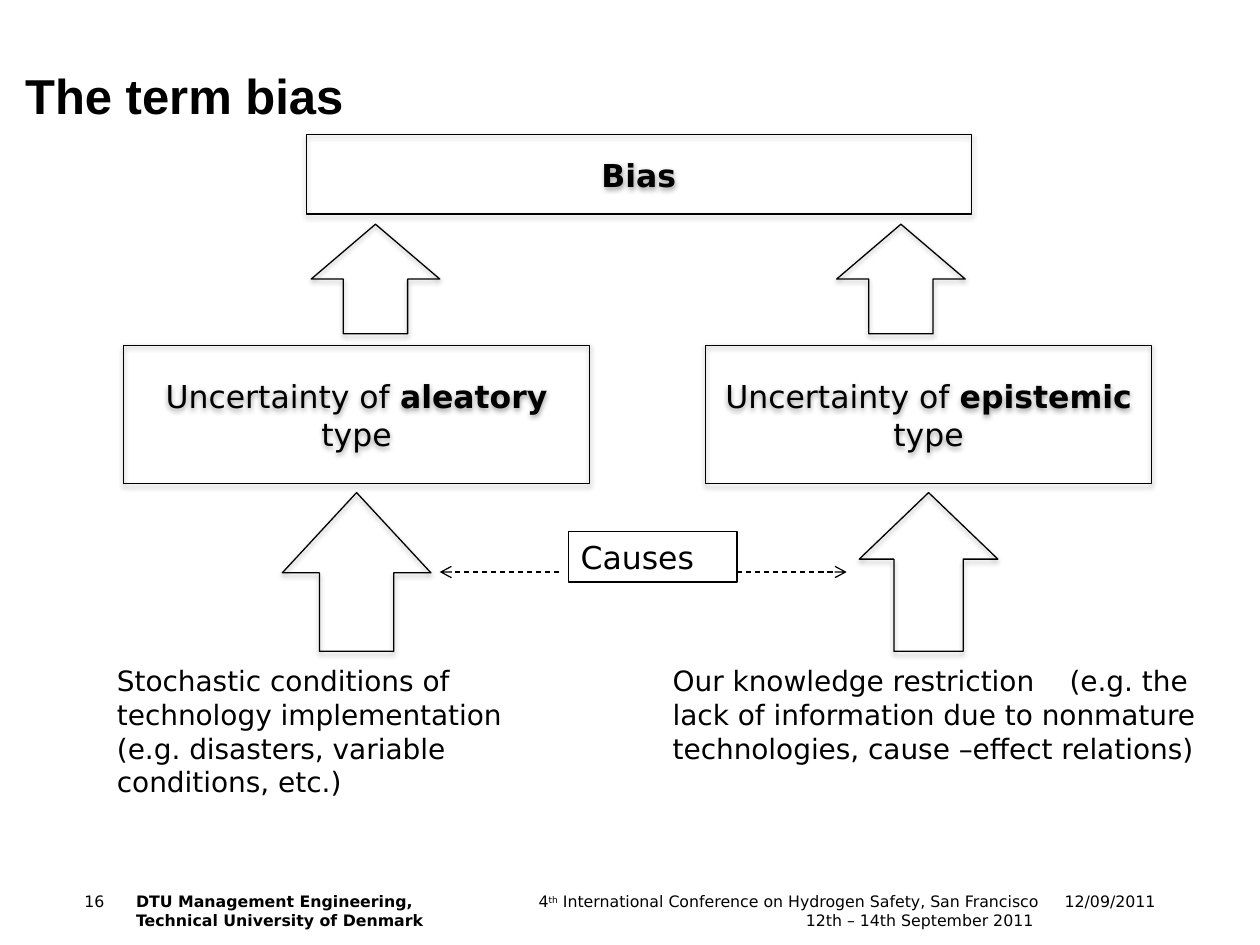
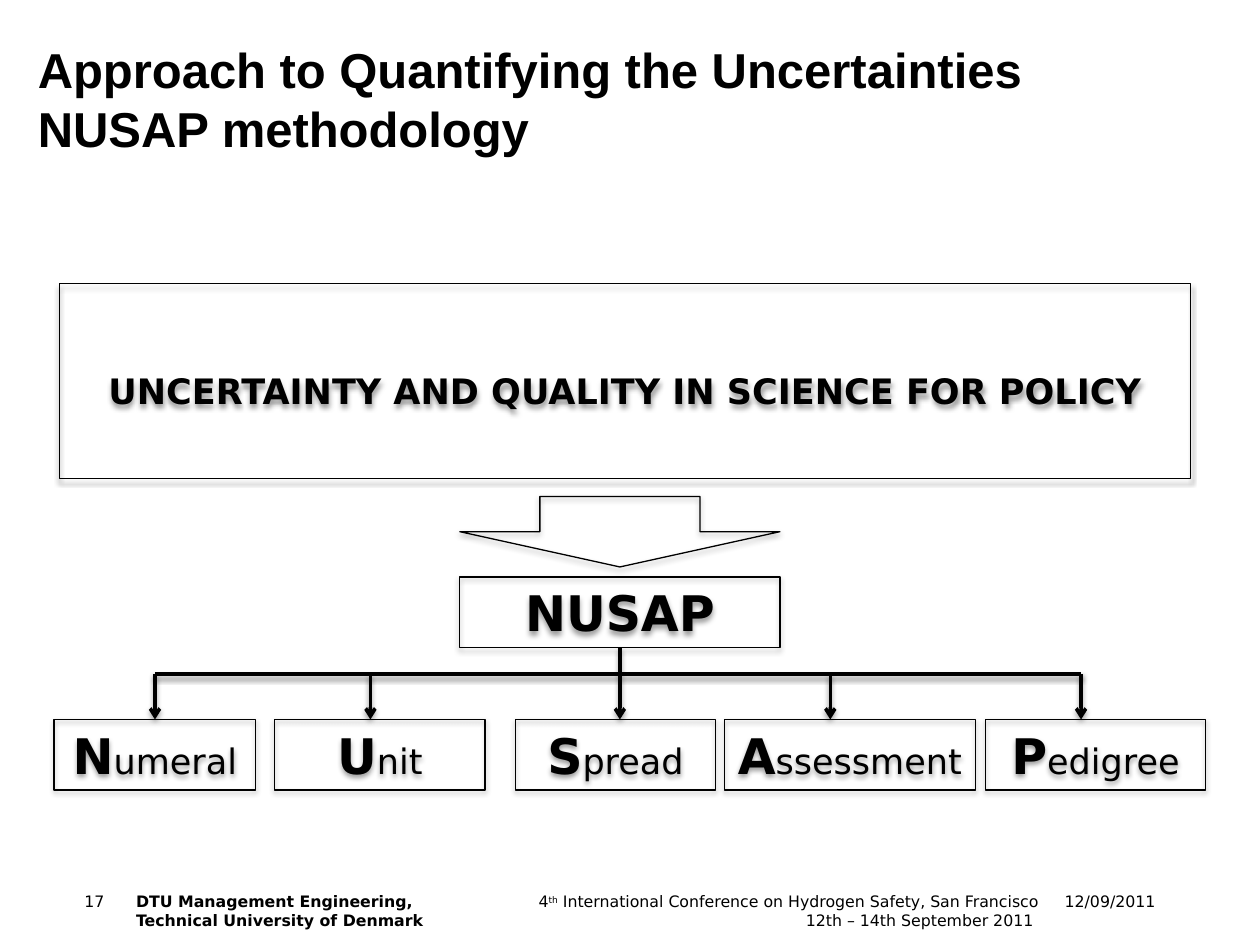
from dataclasses import dataclass
from lxml.etree import SubElement
from pptx import Presentation
from pptx.dml.color import RGBColor
from pptx.enum.dml import MSO_LINE_DASH_STYLE as Dash
from pptx.enum.shapes import MSO_CONNECTOR as Connector, MSO_SHAPE as Shape
from pptx.enum.text import MSO_ANCHOR as Anchor, PP_ALIGN as Align
from pptx.oxml.ns import qn
from pptx.util import Inches, Pt


@dataclass(frozen=True)
class Theme:
    ink: RGBColor = RGBColor(0, 0, 0)
    paper: RGBColor = RGBColor(255, 255, 255)
    title_font: str = "Arial"
    body_font: str = "DejaVu Sans"
    title: int = 28
    initial: int = 28
    heading: int = 20
    label: int = 18
    note: int = 16
    footer: int = 9
    outline: float = 0.75
    branch: float = 2
    shadow_alpha: int = 38000
    shadow_blur: float = 3.1
    shadow_distance: float = 1.6


THEME = Theme()
FOOTER_TOP, FOOTER_HEIGHT = 7.08, 0.33


def add_run(paragraph, text, size, bold=False, font=THEME.body_font):
    run = paragraph.add_run()
    run.text = text
    run.font.size = Pt(size)
    run.font.bold = bold
    run.font.name = font
    run.font.color.rgb = THEME.ink
    return run


def add_title(slide, lines, left, top, width, height):
    title = slide.shapes.title
    title.left, title.top = Inches(left), Inches(top)
    title.width, title.height = Inches(width), Inches(height)
    frame = title.text_frame
    clear_margins(frame)
    frame.word_wrap = True
    frame.vertical_anchor = Anchor.BOTTOM
    paragraph = frame.paragraphs[0]
    paragraph.alignment = Align.LEFT
    for index, line in enumerate(lines):
        if index:
            paragraph.add_line_break()
        add_run(paragraph, line, THEME.title, True, THEME.title_font)


def clear_margins(frame):
    frame.margin_left = frame.margin_right = 0
    frame.margin_top = frame.margin_bottom = 0


def add_text(slide, left, top, width, height):
    box = slide.shapes.add_textbox(Inches(left), Inches(top), Inches(width), Inches(height))
    box.text_frame.word_wrap = True
    return box.text_frame


def add_footer_part(slide, left, width, align=Align.LEFT):
    frame = add_text(slide, left, FOOTER_TOP, width, FOOTER_HEIGHT)
    clear_margins(frame)
    frame.paragraphs[0].alignment = align
    return frame


def add_footer(slide, number):
    date = add_footer_part(slide, 8.33, 0.84, Align.RIGHT).paragraphs[0]
    add_run(date, "12/09/2011", THEME.footer)

    conference = add_footer_part(slide, 4.13, 4.11, Align.RIGHT).paragraphs[0]
    add_run(conference, "4", THEME.footer)
    ordinal = add_run(conference, "th", THEME.footer)
    ordinal.font._element.set("baseline", "30000")
    add_run(conference, " International Conference on Hydrogen Safety, San Francisco "
            "12th – 14th September 2011 ", THEME.footer)

    page = add_footer_part(slide, 0.67, 0.33).paragraphs[0]
    add_run(page, str(number), THEME.footer)

    institute = add_footer_part(slide, 1.08, 2.9)
    add_run(institute.paragraphs[0], "DTU Management Engineering,", THEME.footer, True)
    add_run(institute.add_paragraph(), "Technical University of Denmark", THEME.footer, True)


def add_shadow(effects):
    shadow = SubElement(effects, qn("a:outerShdw"), blurRad=str(Pt(THEME.shadow_blur)),
                        dist=str(Pt(THEME.shadow_distance)), dir="5400000", rotWithShape="0")
    color = SubElement(shadow, qn("a:srgbClr"), val=str(THEME.ink))
    SubElement(color, qn("a:alpha"), val=str(THEME.shadow_alpha))


def add_outlined(slide, kind, left, top, width, height, shadow=True):
    shape = slide.shapes.add_shape(kind, Inches(left), Inches(top), Inches(width), Inches(height))
    shape.fill.background()
    shape.line.color.rgb = THEME.ink
    shape.line.width = Pt(THEME.outline)
    shape.shadow.inherit = False
    if shadow:
        add_shadow(shape._element.spPr.find(qn("a:effectLst")))
    return shape


def add_block_arrow(slide, kind, left, top, width, height, head=0.5):
    arrow = add_outlined(slide, kind, left, top, width, height)
    arrow.adjustments[0] = 0.5
    arrow.adjustments[1] = head


def add_box(slide, left, top, width, height, parts, align=Align.CENTER, shadow=True):
    box = add_outlined(slide, Shape.RECTANGLE, left, top, width, height, shadow)
    frame = box.text_frame
    frame.word_wrap = True
    frame.vertical_anchor = Anchor.MIDDLE
    paragraph = frame.paragraphs[0]
    paragraph.alignment = align
    for text, size, bold in parts:
        add_run(paragraph, text, size, bold)
    return box


def add_line(slide, start, end, width, arrow=True, dashed=False, shadow=False):
    line = slide.shapes.add_connector(Connector.STRAIGHT, *map(Inches, start + end))
    line.line.color.rgb = THEME.ink
    line.line.width = Pt(width)
    if dashed:
        line.line.dash_style = Dash.DASH
    properties = line._element.spPr
    if arrow:
        SubElement(properties.find(qn("a:ln")), qn("a:tailEnd"), type="arrow")
    effects = SubElement(properties, qn("a:effectLst"))
    if shadow:
        add_shadow(effects)
    return line


def add_note(slide, left, width, height, text, tab=None):
    paragraph = add_text(slide, left, 5.22, width, height).paragraphs[0]
    if tab:
        stops = SubElement(paragraph._p.get_or_add_pPr(), qn("a:tabLst"))
        SubElement(stops, qn("a:tab"), pos=str(Inches(tab)), algn="l")
    add_run(paragraph, text, THEME.note)


def new_slide(deck, number):
    slide = deck.slides.add_slide(deck.slide_layouts[5])
    slide.background.fill.solid()
    slide.background.fill.fore_color.rgb = THEME.paper
    add_footer(slide, number)
    return slide


def build_bias(deck):
    slide = new_slide(deck, 16)
    add_title(slide, ["The term bias"], 0.2, 0.36, 9, 0.63)

    add_box(slide, 2.43, 1.07, 5.28, 0.63, [("Bias", THEME.label, True)])
    for left, width, uncertainty in ((0.98, 3.7, "aleatory"), (5.6, 3.54, "epistemic")):
        add_box(slide, left, 2.74, width, 1.1, [
            ("Uncertainty of ", THEME.label, False),
            (uncertainty, THEME.label, True),
            (" type", THEME.label, False)])
    for left, width, head in ((2.24, 1.18, 0.54), (6.82, 1.1, 0.48)):
        add_block_arrow(slide, Shape.UP_ARROW, left, 3.91, width, 1.26, head)
    for left in (2.47, 6.64):
        add_block_arrow(slide, Shape.UP_ARROW, left, 1.78, 1.02, 0.87)

    add_box(slide, 4.51, 4.22, 1.34, 0.4, [("Causes", THEME.label, False)], Align.LEFT, False)
    for start, end in ((4.44, 3.49), (5.85, 6.72)):
        add_line(slide, (start, 4.54), (end, 4.54), THEME.outline, dashed=True)

    add_note(slide, 0.83, 3.54, 1.18, "Stochastic conditions of technology implementation "
             "(e.g. disasters, variable conditions, etc.)")
    add_note(slide, 5.24, 4.41, 0.91, "Our knowledge restriction\t(e.g. the lack of information "
             "due to nonmature technologies, cause –effect relations)", tab=3.15)


def build_nusap(deck):
    slide = new_slide(deck, 17)
    add_title(slide, ["Approach to Quantifying the Uncertainties", "NUSAP methodology"],
              0.3, 0.14, 9, 1.11)

    policy = add_box(slide, 0.47, 2.25, 8.98, 1.55, [
        ("UNCERTAINTY AND QUALITY IN SCIENCE FOR POLICY", THEME.heading, True)])
    policy.text_frame.margin_top = Inches(0.2)
    add_block_arrow(slide, Shape.DOWN_ARROW, 3.65, 3.94, 2.54, 0.56)
    nusap = add_box(slide, 3.65, 4.58, 2.54, 0.56, [("NUSAP", THEME.initial, True)])

    categories = (
        ("Numeral", 0.43, 1.6, 1.23),
        ("Unit", 2.18, 1.67, 2.94),
        ("Spread", 4.09, 1.59, 4.92),
        ("Assessment", 5.75, 1.99, 6.59),
        ("Pedigree", 7.82, 1.75, 8.58),
    )
    branch_top, category_top = 5.35, 5.71
    first_drop, last_drop = categories[0][3], categories[-1][3]
    add_line(slide, (first_drop, branch_top), (last_drop, branch_top), THEME.branch,
             arrow=False, shadow=True)
    for name, left, width, drop in categories:
        category = add_box(slide, left, category_top, width, 0.56, [
            (name[0], THEME.initial, True), (name[1:], THEME.heading, False)])
        start = 5.14 if name == "Spread" else branch_top
        arrow = add_line(slide, (drop, start), (drop, category_top), THEME.branch, shadow=True)
        if name == "Spread":
            arrow.begin_connect(nusap, 2)
        if name == "Numeral":
            arrow.end_connect(category, 0)


def main():
    deck = Presentation()
    deck.slide_width, deck.slide_height = Inches(10), Inches(7.5)
    build_bias(deck)
    build_nusap(deck)
    deck.save("out.pptx")


if __name__ == "__main__":
    main()
